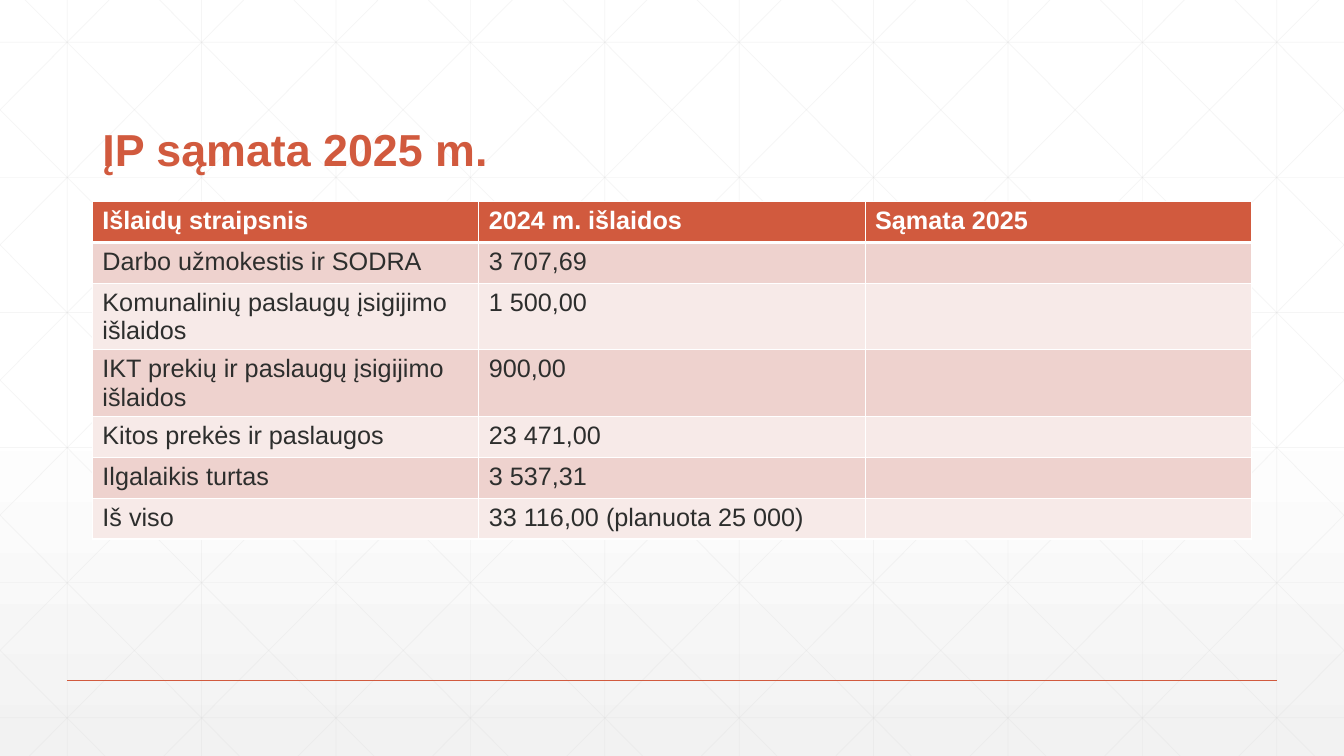
"""Build the 2025 budget estimate slide: title and expense table on a grid background."""
from lxml.etree import SubElement
from pptx import Presentation
from pptx.dml.color import RGBColor
from pptx.enum.shapes import MSO_CONNECTOR
from pptx.enum.text import MSO_ANCHOR, MSO_AUTO_SIZE
from pptx.oxml import parse_xml
from pptx.oxml.ns import nsdecls, qn
from pptx.util import Pt

ACCENT, DARK, WHITE, GRID = "D15A3E", "2D2E2D", "FFFFFF", "D9D9D9"
BANDS = ["F7EAE8", "EED2CE"]
W, H = 960, 540
STEP, RUN = 96, 537


def rgb(value):
    return RGBColor.from_string(value)


def add_line(s, x1, y1, x2, y2, color, width):
    line = s.shapes.add_connector(MSO_CONNECTOR.STRAIGHT, Pt(x1), Pt(y1), Pt(x2), Pt(y2))
    line.line.color.rgb = rgb(color)
    line.line.width = Pt(width)
    SubElement(line._element.spPr, qn("a:effectLst"))
    return line


prs = Presentation()
prs.slide_width, prs.slide_height = Pt(W), Pt(H)
s = prs.slides.add_slide(prs.slide_layouts[5])

fill = s.background.fill
fill.gradient()
fill.gradient_angle = 270
for stop, position, color in zip(fill.gradient_stops, (0.53, 1), (WHITE, "F2F2F2")):
    stop.position = position
    stop.color.rgb = rgb(color)

grid = [(48 + STEP * i, 0, 48 + STEP * i, H) for i in range(10)]
grid += [(0, 30.24 + 96.48 * i, W, 30.24 + 96.48 * i) for i in range(6)]
for i in range(-5, 10):
    start = 18 + STEP * i
    x1, x2 = max(start, 0), min(start + RUN, W)
    y1, y2 = [(x - start) * H / RUN for x in (x1, x2)]
    grid += [(x1, y1, x2, y2), (W - x1, y1, W - x2, y2)]
for ends in grid:
    line = add_line(s, *ends, GRID, 0.5)
    SubElement(line._element.find(".//" + qn("a:srgbClr")), qn("a:alpha"), val="25000")
add_line(s, 48, 486, 912, 486, ACCENT, 1)

title = s.shapes.title
s.shapes._spTree.append(title._element)
title.left, title.top, title.width, title.height = Pt(66), Pt(39.6), Pt(792), Pt(90)
tf = title.text_frame
tf.text = "ĮP sąmata 2025 m."
for name, value in {"vertical_anchor": MSO_ANCHOR.BOTTOM, "word_wrap": True,
                    "auto_size": MSO_AUTO_SIZE.NONE}.items():
    setattr(tf, name, value)
p = tf.paragraphs[0]
p.line_spacing = 0.9
p.alignment = 1
r = p.runs[0]
for name, value in {"size": Pt(32), "name": "Arial", "bold": True}.items():
    setattr(r.font, name, value)
r.font.color.rgb = rgb(ACCENT)

rows = [
    ("Išlaidų straipsnis", "2024 m. išlaidos", "Sąmata 2025"),
    ("Darbo užmokestis ir SODRA", "3 707,69", ""),
    ("Komunalinių paslaugų įsigijimo išlaidos", "1 500,00", ""),
    ("IKT prekių ir paslaugų įsigijimo išlaidos", "900,00", ""),
    ("Kitos prekės ir paslaugos", "23 471,00", ""),
    ("Ilgalaikis turtas", "3 537,31", ""),
    ("Iš viso", "33 116,00 (planuota 25 000)", ""),
]
table = s.shapes.add_table(len(rows), 3, Pt(66), Pt(144), Pt(828), Pt(29.2 * len(rows))).table
for i, row in enumerate(rows):
    header = i == 0
    for j, text in enumerate(row):
        cell = table.cell(i, j)
        cell.fill.solid()
        cell.fill.fore_color.rgb = rgb(ACCENT if header else BANDS[i % 2])
        cell.text = text
        font = cell.text_frame.paragraphs[0].font
        for r in cell.text_frame.paragraphs[0].runs:
            font = r.font
        for name, value in {"size": Pt(18), "name": "Arial", "bold": header}.items():
            setattr(font, name, value)
        font.color.rgb = rgb(WHITE if header else DARK)
        widths = {"lnL": 1, "lnR": 1, "lnT": 3 if i == 1 else 1, "lnB": 3 if header else 1}
        for k, (side, width) in enumerate(widths.items()):
            cell._tc.tcPr.insert(k, parse_xml(
                f'<a:{side} {nsdecls("a")} w="{Pt(width)}"><a:solidFill>'
                f'<a:srgbClr val="{WHITE}"/></a:solidFill></a:{side}>'))

prs.save("out.pptx")
